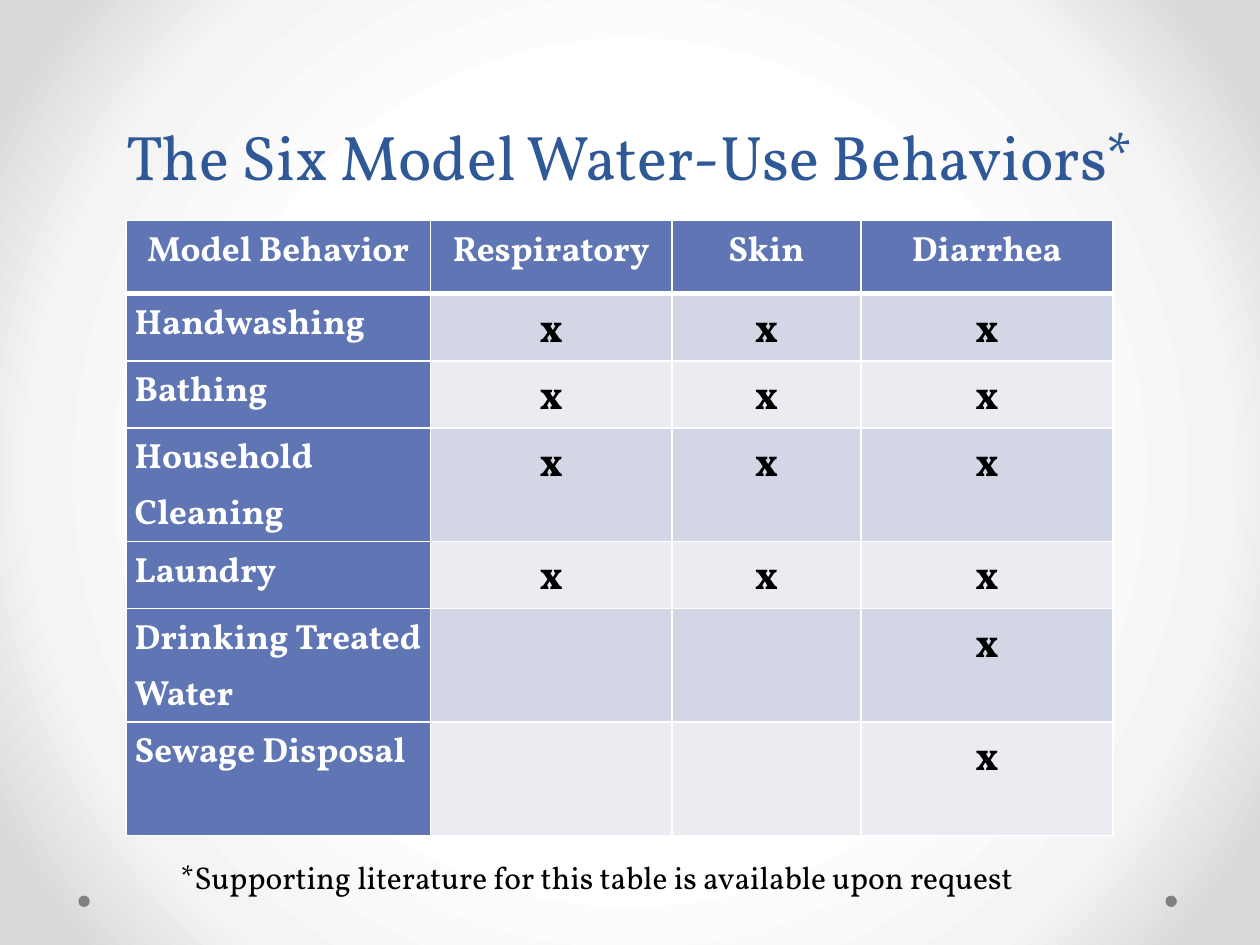
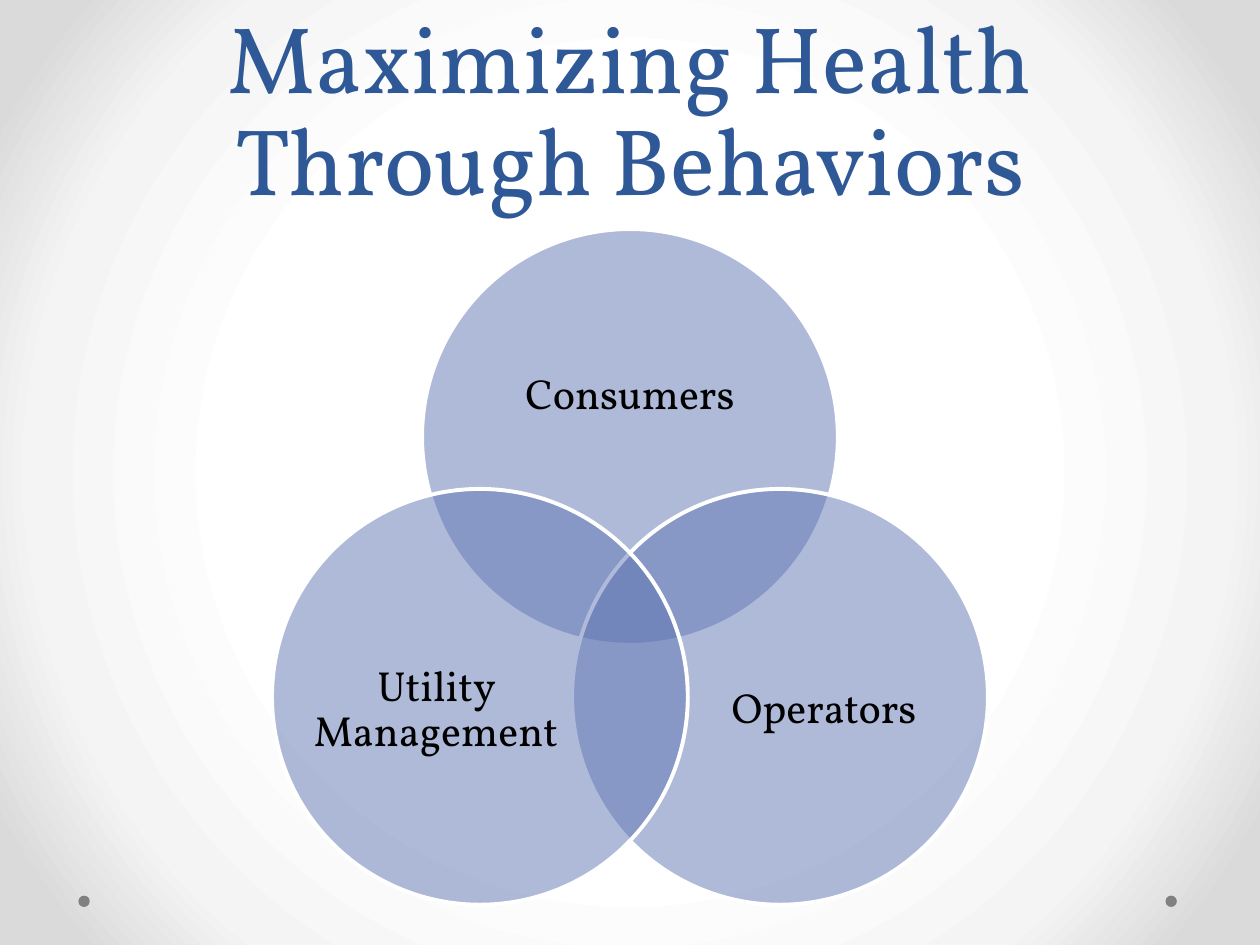
from math import cos, radians, sin

from lxml import etree
from pptx import Presentation
from pptx.dml.color import RGBColor
from pptx.enum.shapes import MSO_SHAPE
from pptx.enum.text import MSO_ANCHOR, MSO_AUTO_SIZE, PP_ALIGN
from pptx.oxml import parse_xml
from pptx.oxml.ns import nsdecls, qn
from pptx.util import Pt

OVAL = MSO_SHAPE.OVAL
LEFT, CENTER = PP_ALIGN.LEFT, PP_ALIGN.CENTER
TOP, MIDDLE, BOTTOM = MSO_ANCHOR.TOP, MSO_ANCHOR.MIDDLE, MSO_ANCHOR.BOTTOM
NO_AUTOFIT = MSO_AUTO_SIZE.NONE

TITLE_BLUE = RGBColor(0x2F, 0x58, 0x97)
ACCENT = RGBColor(0x60, 0x76, 0xB4)
BANDS = RGBColor(0xD2, 0xD6, 0xE5), RGBColor(0xEA, 0xEC, 0xF2)
DOT_GRAY = RGBColor(0x80, 0x80, 0x80)
WHITE = RGBColor(0xFF, 0xFF, 0xFF)
BLACK = RGBColor(0, 0, 0)
BACKDROP = (50, "FFFFFF"), (76, "F4F4F4"), (92, "DADADA")

FONT = "Vollkorn"
TITLE_ONLY = 5

# Behaviors and the illnesses they affect
HEADINGS = ["Model Behavior", "Respiratory", "Skin", "Diarrhea"]
BEHAVIORS = [
    # name, marks per illness, row height
    ("Handwashing", "xxx", 33.1),
    ("Bathing", "xxx", 33.1),
    ("Household Cleaning", "xxx", 64.8),
    ("Laundry", "xxx", 33.1),
    ("Drinking Treated Water", "  x", 64.8),
    ("Sewage Disposal", "  x", 64.8),
]
HEADER_HEIGHT = 41.8
COL_WIDTHS = [174, 138, 108, 144]

# Venn circles: angle from the centre, label, label box
VENN_CENTER = 360, 348.7
VENN_OFFSET = 99
VENN_DIAMETER = 237.6
VENN = [
    (-90, "Consumers", (272.9, 172.8, 174.2, 107.3)),
    (30, "Operators", (399.6, 340.6, 142.6, 130.3)),
    (150, "Utility Management", (177.8, 340.6, 142.6, 130.3)),
]


def set_all(obj, **values):
    for name, value in values.items():
        setattr(obj, name, value)


def write(tf, text, size, color, align=LEFT, spacing=1.0, bold=False):
    p = tf.paragraphs[0]
    set_all(p, alignment=align, line_spacing=spacing)
    r = p.add_run()
    r.text = text
    set_all(r.font, name=FONT, size=Pt(size), bold=bold)
    r.font.color.rgb = color


def set_backdrop(master):
    """Give every slide the radial white to gray background."""
    stops = "".join(f'<a:gs pos="{pos * 1000}"><a:srgbClr val="{color}"/></a:gs>'
                    for pos, color in BACKDROP)
    master.background.fill.gradient()
    old = master.element.find(".//" + qn("a:gradFill"))
    old.getparent().replace(old, parse_xml(
        f'<a:gradFill {nsdecls("a")} rotWithShape="1"><a:gsLst>{stops}</a:gsLst>'
        '<a:path path="circle"><a:fillToRect l="50000" t="50000" r="50000" b="50000"/>'
        '</a:path></a:gradFill>'))


def add_circle(s, left, top, size, color):
    sp = s.shapes.add_shape(OVAL, Pt(left), Pt(top), Pt(size), Pt(size))
    sp.shadow.inherit = False
    sp.fill.solid()
    sp.fill.fore_color.rgb = color
    sp.line.fill.background()
    return sp


def add_slide(prs, title, top, height, size):
    s = prs.slides.add_slide(prs.slide_layouts[TITLE_ONLY])
    # Corner dots
    for left in (44.8, 666):
        add_circle(s, left, 511.8, 6.5, DOT_GRAY)
    # Title
    sp = s.shapes.title
    set_all(sp, left=Pt(36), top=Pt(top), width=Pt(648), height=Pt(height))
    set_all(sp.text_frame, vertical_anchor=BOTTOM, word_wrap=True, auto_size=NO_AUTOFIT)
    write(sp.text_frame, title, size, TITLE_BLUE, CENTER, Pt(58))
    return s


def add_text(s, box, text, size, align=LEFT, anchor=TOP, spacing=1.0, inset=None):
    tf = s.shapes.add_textbox(*map(Pt, box)).text_frame
    set_all(tf, word_wrap=True, vertical_anchor=anchor)
    if inset is not None:
        set_all(tf, **{f"margin_{side}": Pt(inset)
                       for side in ("left", "top", "right", "bottom")})
    write(tf, text, size, BLACK, align, spacing)


def set_borders(cell, bottom):
    tc_pr = cell._tc.get_or_add_tcPr()
    widths = {"L": 1, "R": 1, "T": 1, "B": bottom}
    for i, (side, width) in enumerate(widths.items()):
        tc_pr.insert(i, parse_xml(
            f'<a:ln{side} {nsdecls("a")} w="{Pt(width)}"><a:solidFill>'
            f'<a:srgbClr val="{WHITE}"/></a:solidFill></a:ln{side}>'))


def format_cell(cell, text, fill, size, color, align, bottom=1):
    set_all(cell, margin_left=Pt(5), margin_right=Pt(5), margin_top=0, margin_bottom=0)
    cell.fill.solid()
    cell.fill.fore_color.rgb = fill
    set_borders(cell, bottom)
    if text.strip():
        write(cell.text_frame, text, size, color, align, 1.15, bold=True)


def add_behavior_table(s):
    heights = [HEADER_HEIGHT] + [height for _, _, height in BEHAVIORS]
    table = s.shapes.add_table(len(heights), len(COL_WIDTHS), Pt(72), Pt(126),
                               Pt(sum(COL_WIDTHS)), Pt(sum(heights))).table
    for col, width in zip(table.columns, COL_WIDTHS):
        col.width = Pt(width)
    for row, height in zip(table.rows, heights):
        row.height = Pt(height)
    for c, heading in enumerate(HEADINGS):
        format_cell(table.cell(0, c), heading, ACCENT, 20, WHITE, CENTER, bottom=3)
    for i, (name, marks, _) in enumerate(BEHAVIORS):
        format_cell(table.cell(i + 1, 0), name, ACCENT, 20, WHITE, LEFT)
        for c, mark in enumerate(marks, 1):
            format_cell(table.cell(i + 1, c), mark, BANDS[i % 2], 24, BLACK, CENTER)


def add_venn_circle(s, angle):
    x, y = VENN_CENTER
    left = x + VENN_OFFSET * cos(radians(angle)) - VENN_DIAMETER / 2
    top = y + VENN_OFFSET * sin(radians(angle)) - VENN_DIAMETER / 2
    sp = add_circle(s, left, top, VENN_DIAMETER, ACCENT)
    sp.line.color.rgb = WHITE
    sp.line.width = Pt(2.25)
    # Half transparent fill
    color = sp._element.spPr.find(qn("a:solidFill")).find(qn("a:srgbClr"))
    etree.SubElement(color, qn("a:alpha"), val="50000")


def main():
    prs = Presentation()
    set_all(prs, slide_width=Pt(720), slide_height=Pt(540))
    set_backdrop(prs.slide_master)

    # Slide 1: behavior table
    s = add_slide(prs, "The Six Model Water-Use Behaviors*", 24, 90, 36)
    add_behavior_table(s)
    add_text(s, (96, 486.7, 522, 29), 
             "*Supporting literature for this table is available upon request", 18)

    # Slide 2: Venn diagram
    s = add_slide(prs, "Maximizing Health Through Behaviors", 0, 126, 54)
    for angle, label, box in VENN:
        add_venn_circle(s, angle)
        add_text(s, box, label, 24, CENTER, MIDDLE, 0.9, inset=0)

    prs.save("out.pptx")


if __name__ == "__main__":
    main()
